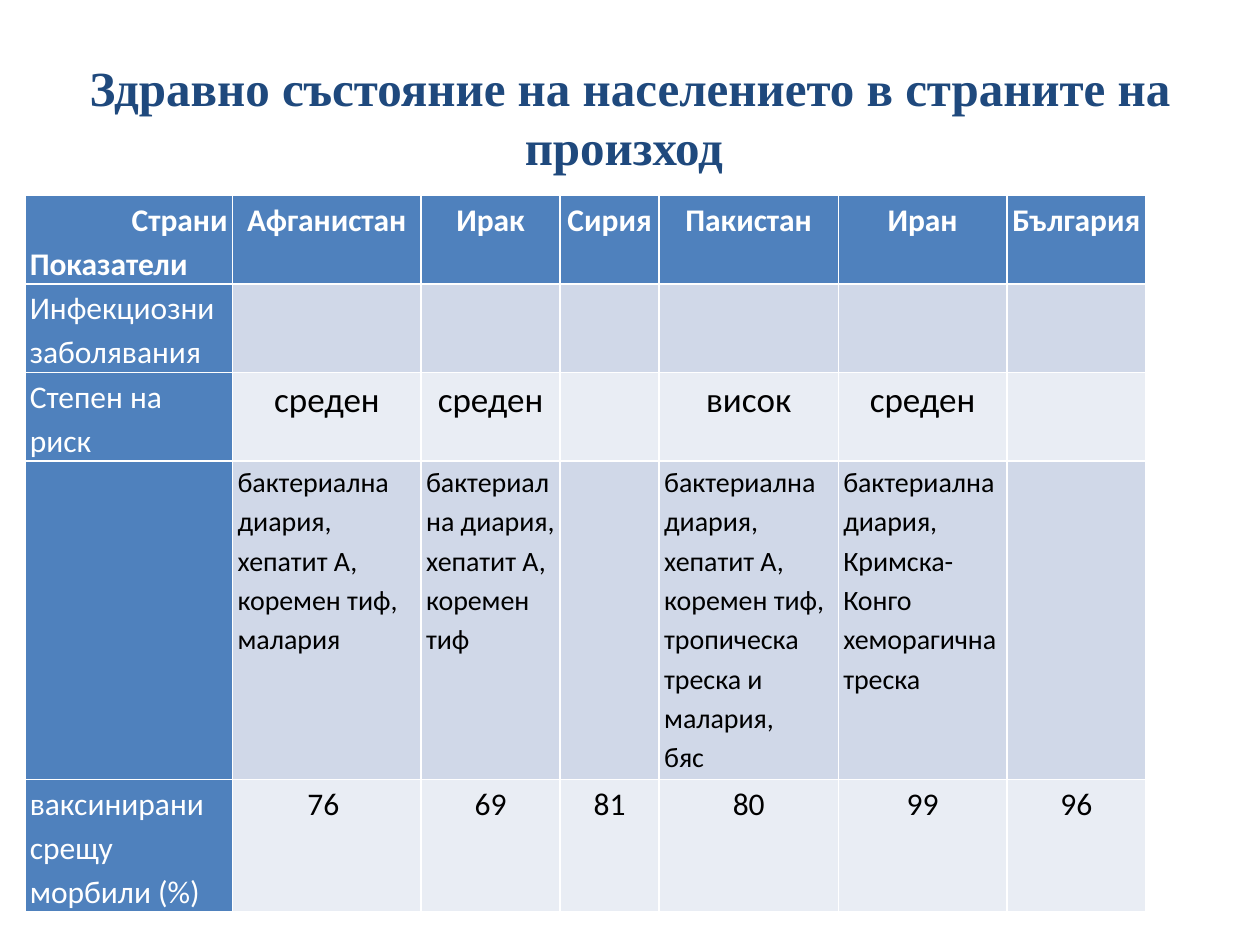
from dataclasses import dataclass

from lxml.etree import SubElement
from pptx import Presentation
from pptx.dml.color import RGBColor
from pptx.enum.text import MSO_ANCHOR, MSO_AUTO_SIZE, PP_ALIGN
from pptx.oxml.ns import qn
from pptx.util import Cm, Pt


@dataclass(frozen=True)
class Theme:
    title_color: str = "1F497D"
    head_fill: str = "4F81BD"
    band_fills: tuple = ("D0D8E8", "E9EDF4")
    light: str = "FFFFFF"
    dark: str = "000000"
    title_font: str = "Times New Roman"
    body_font: str = "Calibri"
    title_size: int = 28
    label_size: int = 18
    risk_size: int = 20
    disease_size: int = 16


THEME = Theme()
TITLE = "Здравно състояние на населението в страните на произход "
CORNER = ("Страни", "Показатели")
COUNTRIES = ("Афганистан", "Ирак", "Сирия", "Пакистан", "Иран", "България")
COLUMN_WIDTHS = (4.19, 3.8, 2.8, 2, 3.61, 3.4, 2.8)
HEADER_HEIGHT = 1.78

# Each row: label, height in cm, text size, alignment, one value per country
INDICATORS = (
    ("Инфекциозни заболявания", 1.78, THEME.label_size, PP_ALIGN.LEFT, ("",) * 6),
    ("Степен на риск", 1.78, THEME.risk_size, PP_ALIGN.CENTER,
     ("среден", "среден", "", "висок", "среден", "")),
    ("", 6.42, THEME.disease_size, PP_ALIGN.LEFT,
     ("бактериална диария, хепатит А, коремен тиф, малария",
      "бактериална диария, хепатит А, коремен тиф",
      "",
      "бактериална диария, хепатит А, коремен тиф,\n"
      "тропическа треска и малария,\nбяс",
      "бактериална диария,\nКримска-Конго хеморагична треска",
      "")),
    ("ваксинирани срещу морбили (%)", 2.67, THEME.label_size, PP_ALIGN.CENTER,
     ("76 ", "69", "81", "80", "99", "96")),
)


def write_text(para, text, *, size, color, font=THEME.body_font, bold=False,
               align=PP_ALIGN.LEFT, spacing=None):
    para.alignment = align
    para.line_spacing = spacing
    span = para.add_run()
    span.text = text
    span.font.name = font
    span.font.size = Pt(size)
    span.font.bold = bold
    span.font.color.rgb = RGBColor.from_string(color)


def draw_borders(cell, color=THEME.light, width=1):
    properties = cell._tc.get_or_add_tcPr()
    for side in ("a:lnL", "a:lnR", "a:lnT", "a:lnB"):
        line = SubElement(properties, qn(side), w=str(Pt(width)))
        fill = SubElement(line, qn("a:solidFill"))
        SubElement(fill, qn("a:srgbClr"), val=color)


def fill_cell(cell, text, fill, *, aligns, **text_format):
    """Style a cell; each line of text is a paragraph with its own alignment."""
    draw_borders(cell)
    cell.fill.solid()
    cell.fill.fore_color.rgb = RGBColor.from_string(fill)
    cell.margin_left = cell.margin_right = Cm(0.1)
    cell.margin_top = cell.margin_bottom = 0
    if not text:
        return
    for index, line in enumerate(text.split("\n")):
        frame = cell.text_frame
        para = frame.add_paragraph() if index else frame.paragraphs[0]
        write_text(para, line, align=aligns[index % len(aligns)],
                   spacing=1.15, **text_format)


def add_title(page):
    box = page.shapes.title
    box.left, box.top, box.width, box.height = Cm(1.27), Cm(0.76), Cm(22.86), Cm(3.18)
    box.text_frame.vertical_anchor = MSO_ANCHOR.MIDDLE
    box.text_frame.auto_size = MSO_AUTO_SIZE.NONE
    write_text(box.text_frame.paragraphs[0], TITLE, font=THEME.title_font,
               size=THEME.title_size, color=THEME.title_color, bold=True,
               align=PP_ALIGN.CENTER)


def add_health_table(page):
    heights = [HEADER_HEIGHT] + [indicator[1] for indicator in INDICATORS]
    table = page.shapes.add_table(
        len(heights), len(COLUMN_WIDTHS), Cm(0.5), Cm(3.94),
        Cm(sum(COLUMN_WIDTHS)), Cm(sum(heights))).table
    for column, width in zip(table.columns, COLUMN_WIDTHS):
        column.width = Cm(width)
    for row, height in zip(table.rows, heights):
        row.height = Cm(height)

    # Header row
    label_format = {"size": THEME.label_size, "color": THEME.light}
    fill_cell(table.cell(0, 0), "\n".join(CORNER), THEME.head_fill, bold=True,
              aligns=(PP_ALIGN.RIGHT, PP_ALIGN.JUSTIFY), **label_format)
    for column, country in enumerate(COUNTRIES, 1):
        fill_cell(table.cell(0, column), country, THEME.head_fill, bold=True,
                  aligns=(PP_ALIGN.CENTER,), **label_format)

    # Indicator rows with alternating bands
    for row, (label, _, size, align, values) in enumerate(INDICATORS, 1):
        fill_cell(table.cell(row, 0), label, THEME.head_fill,
                  aligns=(PP_ALIGN.LEFT,), **label_format)
        band = THEME.band_fills[(row - 1) % 2]
        for column, value in enumerate(values, 1):
            fill_cell(table.cell(row, column), value, band, aligns=(align,),
                      size=size, color=THEME.dark)


def main():
    deck = Presentation()
    deck.slide_width, deck.slide_height = Cm(25.4), Cm(19.05)
    page = deck.slides.add_slide(deck.slide_layouts.get_by_name("Title Only"))
    add_title(page)
    add_health_table(page)
    deck.save("out.pptx")


if __name__ == "__main__":
    main()
